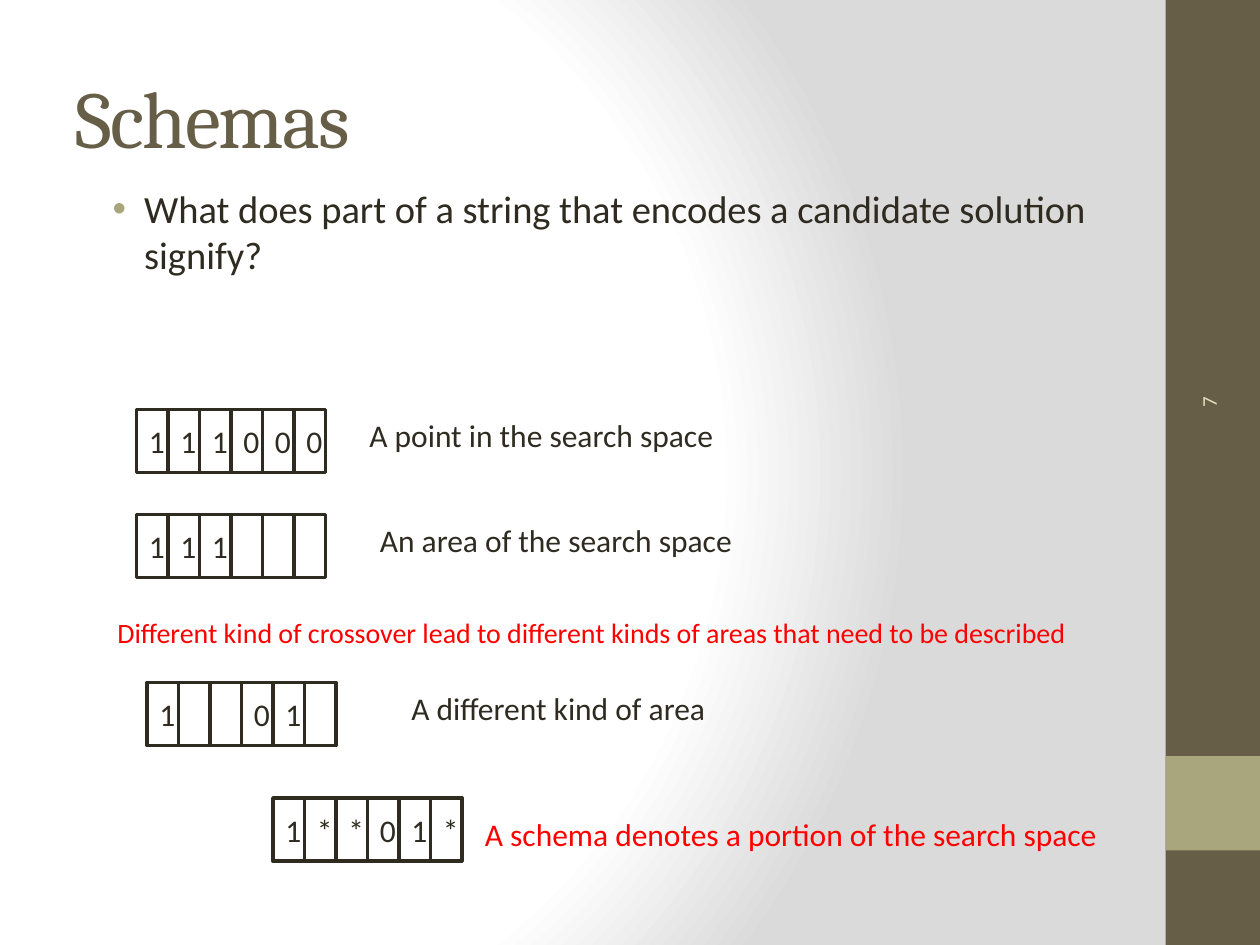
"""Build the slide on schemas as areas of a search space."""
from typing import NamedTuple

from pptx import Presentation
from pptx.dml.color import RGBColor
from pptx.enum.shapes import MSO_SHAPE as Preset
from pptx.enum.text import MSO_ANCHOR as Anchor, MSO_AUTO_SIZE as AutoSize, PP_ALIGN as Align
from pptx.oxml import parse_xml
from pptx.oxml.ns import nsdecls, qn
from pptx.util import Inches, Pt

COLORS = {
    "bar": "675E47",
    "accent": "A9A57C",
    "number": "DFDCB7",
    "ink": "2F2B20",
    "alert": "FF0000",
    "glow": "FFFFFF",
    "edge": "DADADA",
}
UNIT = Inches(1) // 12
CELL_COLS, CELL_ROWS = 3, 6


class Area(NamedTuple):
    col: float
    row: float
    cols: float
    rows: float


class Genome(NamedTuple):
    genes: str
    col: float
    row: float
    caption: str
    caption_area: Area
    caption_color: str = "ink"


GENOMES = [
    Genome("111000", 13, 39, "A point in the search space", Area(34, 39, 37, 4)),
    Genome("111   ", 13, 49, "An area of the search space", Area(35, 49, 37, 4)),
    Genome("1  01 ", 14, 65, "A different kind of area", Area(38, 65, 37, 4)),
    Genome("1**01*", 26, 76, "A schema denotes a portion of the search space",
           Area(45, 77, 66, 4.8), "alert"),
]


def rgb(name: str) -> RGBColor:
    return RGBColor.from_string(COLORS[name])


def place(area: Area) -> list[int]:
    return [round(length * UNIT) for length in area]


def write(holder, text: str, *, size: float = 18, font: str = "Calibri",
          color: str = "ink", anchor=Anchor.MIDDLE, wrap: bool = True, grow: bool = False):
    frame = holder.text_frame
    frame.word_wrap = wrap
    frame.auto_size = AutoSize.SHAPE_TO_FIT_TEXT if grow else AutoSize.NONE
    frame.vertical_anchor = anchor
    paragraph = frame.paragraphs[0]
    paragraph.alignment = Align.LEFT
    run = paragraph.add_run()
    run.text = text
    run.font.size = Pt(size)
    run.font.name = font
    run.font.color.rgb = rgb(color)
    return run


def add_rect(slide, area: Area, fill: str | None = None, line: str | None = None):
    rect = slide.shapes.add_shape(Preset.RECTANGLE, *place(area))
    rect.shadow.inherit = False
    if fill:
        rect.fill.solid()
        rect.fill.fore_color.rgb = rgb(fill)
    else:
        rect.fill.background()
    if line:
        rect.line.color.rgb = rgb(line)
        rect.line.width = Pt(2)
    else:
        rect.line.fill.background()
    return rect


def add_caption(slide, area: Area, text: str, color: str, size: float = 18) -> None:
    write(slide.shapes.add_textbox(*place(area)), text, size=size, color=color,
          anchor=Anchor.TOP, grow=True)


def draw_genome(slide, genome: Genome) -> None:
    for index, gene in enumerate(genome.genes):
        cell = add_rect(slide, Area(genome.col + index * CELL_COLS, genome.row,
                                    CELL_COLS, CELL_ROWS), line="ink")
        if gene.strip():
            write(cell, gene, wrap=False)
    add_caption(slide, genome.caption_area, genome.caption, genome.caption_color)


def paint_background(slide) -> None:
    slide.background.fill.solid()
    solid = slide.element.find(".//" + qn("a:solidFill"))
    stops = "".join(
        f'<a:gs pos="{share * 1000}"><a:srgbClr val="{COLORS[name]}"/></a:gs>'
        for share, name in [(0, "glow"), (75, "glow"), (100, "edge")])
    solid.getparent().replace(solid, parse_xml(
        f'<a:gradFill {nsdecls("a")} rotWithShape="1"><a:gsLst>{stops}</a:gsLst>'
        '<a:path path="circle"><a:fillToRect l="20000" t="50000" r="100000" b="50000"/>'
        '</a:path></a:gradFill>'))


def add_bullet(paragraph) -> None:
    properties = paragraph._p.get_or_add_pPr()
    properties.set("marL", str(Inches(0.38)))
    properties.set("indent", str(Inches(-0.25)))
    for mark in (f'<a:buClr {nsdecls("a")}><a:srgbClr val="{COLORS["accent"]}"/></a:buClr>',
                 f'<a:buFont {nsdecls("a")} typeface="Arial"/>',
                 f'<a:buChar {nsdecls("a")} char="•"/>'):
        properties.append(parse_xml(mark))


def main() -> None:
    deck = Presentation()
    deck.slide_width, deck.slide_height = 120 * UNIT, 90 * UNIT
    slide = deck.slides.add_slide(deck.slide_layouts[6])
    paint_background(slide)

    add_rect(slide, Area(111, 0, 9, 90), fill="bar")
    add_rect(slide, Area(111, 72, 9, 9), fill="accent")
    page_number = slide.shapes.add_textbox(*place(Area(99.1, 21.6, 32, 4.8)))
    page_number.rotation = 270
    write(page_number, "7", size=12, color="number")

    title = slide.shapes.add_textbox(*place(Area(6, 3.6, 100, 15)))
    heading = write(title, "Schemas", size=46, font="Cambria", color="bar")
    heading.font._element.set("spc", "-100")

    question = slide.shapes.add_textbox(*place(Area(8, 17, 102, 14)))
    write(question, "What does part of a string that encodes a candidate solution signify?",
          size=22, anchor=Anchor.TOP)
    add_bullet(question.text_frame.paragraphs[0])

    for genome in GENOMES:
        draw_genome(slide, genome)
    add_caption(slide, Area(10, 58, 94, 4.4),
                "Different kind of crossover lead to different kinds of areas "
                "that need to be described", "alert", size=16)
    deck.save("out.pptx")


if __name__ == "__main__":
    main()
